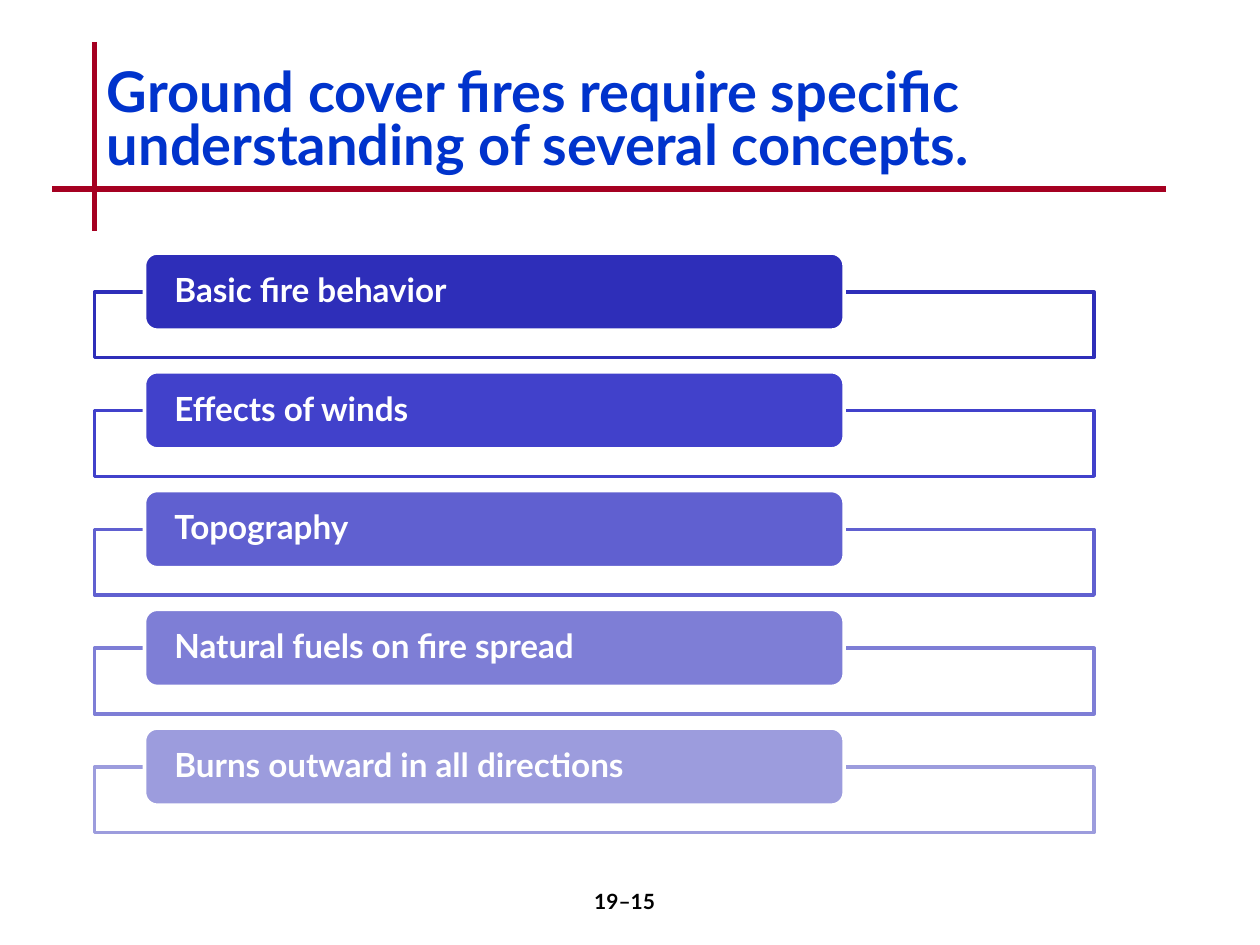
import pptx
import pptx.util
import pptx.dml.color
import pptx.enum.shapes
import pptx.enum.text
import pptx.oxml
import pptx.oxml.ns

# Grid: 120 columns by 90 rows
WIDE, HIGH = pptx.util.Inches(10), pptx.util.Inches(7.5)
COL, ROW = WIDE / 120, HIGH / 90
SHAPE = pptx.enum.shapes.MSO_SHAPE
ALIGN = pptx.enum.text.PP_ALIGN
ANCHOR = pptx.enum.text.MSO_ANCHOR

ITEMS = [
    ("Basic fire behavior", "2E2EB9"),
    ("Effects of winds", "4141CB"),
    ("Topography", "6060D0"),
    ("Natural fuels on fire spread", "7E7ED6"),
    ("Burns outward in all directions", "9C9CDD"),
]


def paint(hue):
    return pptx.dml.color.RGBColor.from_string(hue)


def place(x, y, w, h):
    return [round(v) for v in (x * COL, y * ROW, w * COL, h * ROW)]


def write(frame, text, size, hue, lead=None, align=ALIGN.LEFT):
    frame.word_wrap = True
    frame.text = text
    par = frame.paragraphs[0]
    par.alignment = align
    par.line_spacing = lead
    font = par.runs[0].font
    font.name, font.size, font.bold = "Lato", pptx.util.Pt(size), True
    font.color.rgb = paint(hue)


def add_rule(slide, x1, y1, x2, y2):
    ends = place(x1, y1, x2, y2)
    rule = slide.shapes.add_connector(
        pptx.enum.shapes.MSO_CONNECTOR.STRAIGHT, *ends)
    rule.line.color.rgb = paint("A50021")
    rule.line.width = pptx.util.Pt(3)
    rule._element.spPr.append(pptx.oxml.parse_xml(
        "<a:effectLst %s/>" % pptx.oxml.ns.nsdecls("a")))


def add_block(group, kind, box, fill, edge):
    block = group.shapes.add_shape(kind, *place(*box))
    block.shadow.inherit = False
    block.fill.solid()
    block.fill.fore_color.rgb = paint(fill)
    block.line.color.rgb = paint(edge)
    block.line.width = pptx.util.Pt(2)
    return block


def add_head(slide, x, y, w, h):
    # Crossed rules meet at the lower left of the title
    add_rule(slide, x, y - 2, x, y + h + 4)
    add_rule(slide, x - 4, y + h, x + 102, y + h)
    head = slide.shapes.add_textbox(*place(x, y, w, h))
    write(head.text_frame,
          "Ground cover fires require specific understanding "
          "of several concepts.", 32, "0033CC", 0.8)


def add_list(slide, x, y, w, h):
    # Each tab overlaps the top edge of its frame
    unit = 9.96
    step = (h - unit) / (len(ITEMS) - 1)
    group = slide.shapes.add_group_shape()
    for i, (text, hue) in enumerate(ITEMS):
        top = y + i * step
        frame = add_block(group, SHAPE.RECTANGLE,
                          (x, top + 3.7, w, unit - 3.7), "FFFFFF", hue)
        tint = frame.fill._xPr.find(".//" + pptx.oxml.ns.qn("a:srgbClr"))
        tint.append(pptx.oxml.parse_xml(
            '<a:alpha %s val="90000"/>' % pptx.oxml.ns.nsdecls("a")))
        tab = add_block(group, SHAPE.ROUNDED_RECTANGLE,
                        (x + 0.05 * w, top, 0.7 * w, 7.35), hue, "FFFFFF")
        body = tab.text_frame
        body.margin_left = body.margin_right = round(2.5 * COL)
        body.margin_top = body.margin_bottom = 0
        body.vertical_anchor = ANCHOR.MIDDLE
        write(body, text, 19, "FFFFFF", 0.9)


def add_foot(slide, x, y, w, h):
    foot = slide.shapes.add_textbox(*place(x, y, w, h))
    write(foot.text_frame, "19–15", 12, "000000", align=ALIGN.CENTER)


def main():
    deck = pptx.Presentation()
    deck.slide_width, deck.slide_height = WIDE, HIGH
    slide = deck.slides.add_slide(deck.slide_layouts[6])
    add_head(slide, 9, 6, 104.3, 12)
    add_foot(slide, 47, 84, 25, 6)
    add_list(slide, 9, 24.1, 95.2, 55.2)
    deck.save("out.pptx")


if __name__ == "__main__":
    main()
